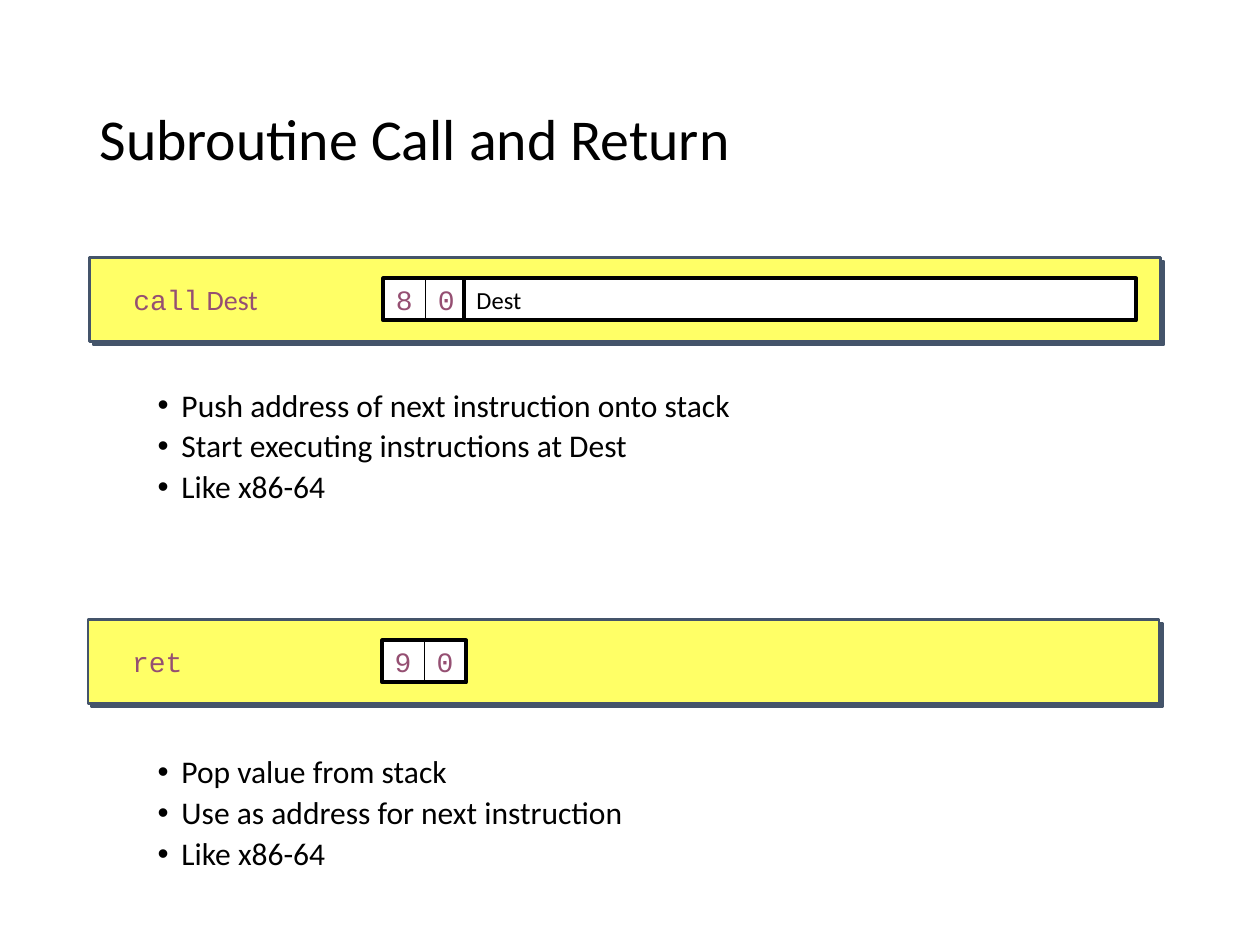
from dataclasses import dataclass
from typing import Any

import lxml.etree
import pptx
import pptx.dml.color
import pptx.enum.shapes
import pptx.enum.text
import pptx.oxml.ns
import pptx.util

RGBColor = pptx.dml.color.RGBColor
BLACK = RGBColor(0x00, 0x00, 0x00)
WHITE = RGBColor(0xFF, 0xFF, 0xFF)
YELLOW = RGBColor(0xFF, 0xFF, 0x66)
SLATE = RGBColor(0x44, 0x54, 0x6A)
PLUM = RGBColor(0x95, 0x4F, 0x72)

SLIDE_WIDTH = pptx.util.Inches(9.99)
SLIDE_HEIGHT = pptx.util.Inches(7.49)
COLUMN = SLIDE_WIDTH / 30
ROW = SLIDE_HEIGHT / 22.5
BODY_FONT = "Calibri"
CODE_FONT = "Courier New"
LIST_GAP = 143.4
ITEM_GAP = 3.8


@dataclass(frozen=True)
class Box:
    column: float
    row: float
    columns: float
    rows: float

    def emu(self) -> tuple[int, int, int, int]:
        return (round(self.column * COLUMN), round(self.row * ROW),
                round(self.columns * COLUMN), round(self.rows * ROW))


@dataclass(frozen=True)
class Run:
    text: str
    font: str
    size: float
    color: RGBColor


@dataclass(frozen=True)
class Instruction:
    column: float
    row: float
    syntax: tuple[Run, ...]
    opcode: str
    operand: str
    effects: tuple[str, ...]


def code(text: str) -> Run:
    return Run(text, CODE_FONT, 16, PLUM)


INSTRUCTIONS = (
    Instruction(2.13, 6.13, (code("call"), Run(" Dest", BODY_FONT, 16, PLUM)), "80", "Dest",
                ("Push address of next instruction onto stack",
                 "Start executing instructions at Dest",
                 "Like x86-64")),
    Instruction(2.1, 14.75, (code("ret"),), "90", "",
                ("Pop value from stack",
                 "Use as address for next instruction",
                 "Like x86-64")),
)


def add_run(paragraph: Any, content: Run) -> None:
    run = paragraph.add_run()
    run.text = content.text
    run.font.name = content.font
    run.font.size = pptx.util.Pt(content.size)
    run.font.color.rgb = content.color


def write_line(holder: Any, runs: tuple[Run, ...]) -> None:
    frame = holder.text_frame
    frame.word_wrap = False
    frame.vertical_anchor = pptx.enum.text.MSO_ANCHOR.MIDDLE
    paragraph = frame.paragraphs[0]
    paragraph.alignment = pptx.enum.text.PP_ALIGN.LEFT
    for content in runs:
        add_run(paragraph, content)


def add_rectangle(shapes: Any, box: Box, fill: RGBColor | None,
                  line: RGBColor, weight: float) -> Any:
    rectangle = shapes.add_shape(pptx.enum.shapes.MSO_SHAPE.RECTANGLE, *box.emu())
    rectangle.shadow.inherit = False
    if fill is None:
        rectangle.fill.background()
    else:
        rectangle.fill.solid()
        rectangle.fill.fore_color.rgb = fill
    rectangle.line.color.rgb = line
    rectangle.line.width = pptx.util.Pt(weight)
    return rectangle


def cast_shadow(banner: Any, color: RGBColor) -> None:
    qn = pptx.oxml.ns.qn
    effects = banner.element.spPr.find(qn("a:effectLst"))
    shadow = lxml.etree.SubElement(effects, qn("a:outerShdw"), blurRad="0",
                                   dist=str(pptx.util.Pt(2.8)), dir="2700000",
                                   algn="ctr", rotWithShape="0")
    lxml.etree.SubElement(shadow, qn("a:srgbClr"), val=str(color))


def draw_instruction(shapes: Any, instruction: Instruction) -> None:
    left, top = instruction.column, instruction.row
    banner = add_rectangle(shapes, Box(left, top, 25.5, 2), YELLOW, SLATE, 1.5)
    cast_shadow(banner, SLATE)
    field_row = top + 0.5
    syntax = shapes.add_textbox(*Box(left + 0.75, field_row, 6.25, 1).emu())
    write_line(syntax, instruction.syntax)

    opcode_column = left + 7
    opcode = shapes.add_group_shape()
    for index, digit in enumerate(instruction.opcode):
        nibble = add_rectangle(opcode.shapes, Box(opcode_column + index, field_row, 1, 1),
                               WHITE, BLACK, 0.5)
        write_line(nibble, (code(digit),))
    add_rectangle(opcode.shapes, Box(opcode_column, field_row, 2, 1), None, BLACK, 2.25)

    if instruction.operand:
        operand = add_rectangle(shapes, Box(left + 8.92, field_row, 16, 1), WHITE, BLACK, 2.25)
        write_line(operand, (Run(instruction.operand, BODY_FONT, 14, BLACK),))


def place(placeholder: Any, box: Box, anchor: Any) -> Any:
    placeholder.left, placeholder.top, placeholder.width, placeholder.height = box.emu()
    frame = placeholder.text_frame
    frame.auto_size = pptx.enum.text.MSO_AUTO_SIZE.NONE
    frame.vertical_anchor = anchor
    return frame


def write_title(placeholder: Any, text: str) -> None:
    frame = place(placeholder, Box(2.07, 1.2, 25.85, 4.35), pptx.enum.text.MSO_ANCHOR.MIDDLE)
    paragraph = frame.paragraphs[0]
    paragraph.alignment = pptx.enum.text.PP_ALIGN.LEFT
    paragraph.line_spacing = 0.9
    add_run(paragraph, Run(text, BODY_FONT, 33, BLACK))


def write_effects(placeholder: Any, instructions: tuple[Instruction, ...]) -> None:
    qn = pptx.oxml.ns.qn
    frame = place(placeholder, Box(2.34, 9.13, 25.28, 15.25), pptx.enum.text.MSO_ANCHOR.TOP)
    for block, instruction in enumerate(instructions):
        for item, effect in enumerate(instruction.effects):
            starts_later_list = block > 0 and item == 0
            first = block == 0 and item == 0
            paragraph = frame.paragraphs[0] if first else frame.add_paragraph()
            paragraph.level = 1
            paragraph.line_spacing = 0.9
            paragraph.space_before = pptx.util.Pt(LIST_GAP if starts_later_list else ITEM_GAP)
            add_run(paragraph, Run(effect, BODY_FONT, 18, BLACK))
            properties = paragraph._p.get_or_add_pPr()
            properties.set("marL", str(pptx.util.Inches(0.56)))
            properties.set("indent", str(pptx.util.Inches(-0.19)))
            lxml.etree.SubElement(properties, qn("a:buFont"), typeface="Arial")
            lxml.etree.SubElement(properties, qn("a:buChar"), char="•")


def main() -> None:
    presentation = pptx.Presentation()
    presentation.slide_width = SLIDE_WIDTH
    presentation.slide_height = SLIDE_HEIGHT
    slide = presentation.slides.add_slide(presentation.slide_layouts[1])
    write_title(slide.shapes.title, "Subroutine Call and Return")
    write_effects(slide.placeholders[1], INSTRUCTIONS)
    for instruction in INSTRUCTIONS:
        draw_instruction(slide.shapes, instruction)
    presentation.save("out.pptx")


if __name__ == "__main__":
    main()
